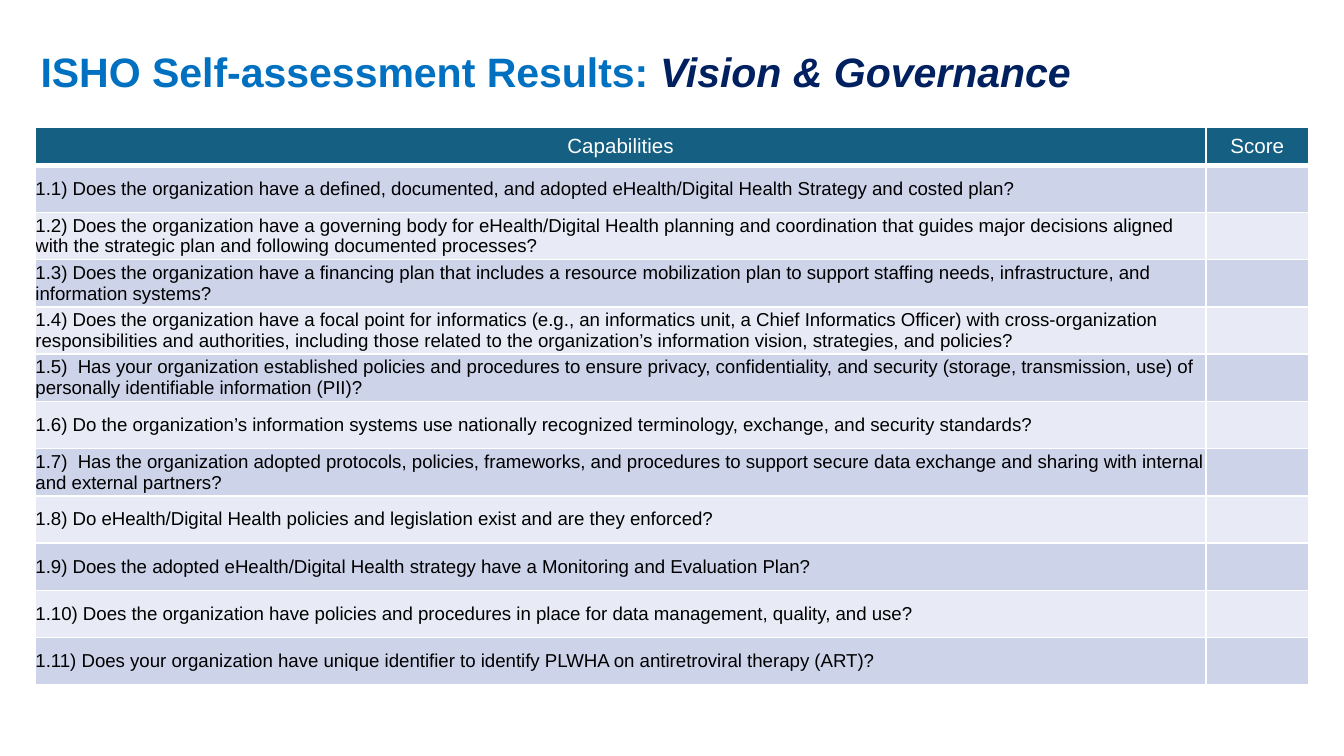
from lxml.etree import SubElement
from pptx import Presentation
from pptx.dml.color import RGBColor
from pptx.enum.text import MSO_ANCHOR, PP_ALIGN
from pptx.oxml.ns import qn
from pptx.util import Pt

QUESTIONS = [
    "1.1) Does the organization have a defined, documented, and adopted eHealth/Digital Health Strategy and costed plan?",
    "1.2) Does the organization have a governing body for eHealth/Digital Health planning and coordination that guides major decisions aligned with the strategic plan and following documented processes?",
    "1.3) Does the organization have a financing plan that includes a resource mobilization plan to support staffing needs, infrastructure, and information systems?",
    "1.4) Does the organization have a focal point for informatics (e.g., an informatics unit, a Chief Informatics Officer) with cross-organization responsibilities and authorities, including those related to the organization’s information vision, strategies, and policies?",
    "1.5)  Has your organization established policies and procedures to ensure privacy, confidentiality, and security (storage, transmission, use) of personally identifiable information (PII)?",
    "1.6) Do the organization’s information systems use nationally recognized terminology, exchange, and security standards?",
    "1.7)  Has the organization adopted protocols, policies, frameworks, and procedures to support secure data exchange and sharing with internal and external partners?",
    "1.8) Do eHealth/Digital Health policies and legislation exist and are they enforced?",
    "1.9) Does the adopted eHealth/Digital Health strategy have a Monitoring and Evaluation Plan?",
    "1.10) Does the organization have policies and procedures in place for data management, quality, and use?",
    "1.11) Does your organization have unique identifier to identify PLWHA on antiretroviral therapy (ART)?",
]


def color(value):
    return RGBColor.from_string(value)


class SlideBuilder:
    font = "Arial"
    white = "FFFFFF"
    header_fill = "156082"
    bands = ("CDD4EA", "E8EBF5")

    def __init__(self, page):
        self.page = page

    def title(self, left, top, width, height, parts):
        box = self.page.shapes.add_textbox(Pt(left), Pt(top), Pt(width), Pt(height))
        frame = box.text_frame
        frame.word_wrap = True
        frame.vertical_anchor = MSO_ANCHOR.MIDDLE
        frame.margin_left = frame.margin_right = Pt(5)
        frame.margin_top = frame.margin_bottom = Pt(3)
        para = frame.paragraphs[0]
        para.alignment = PP_ALIGN.CENTER
        para.font.name, para.font.size, para.font.bold = self.font, Pt(22), True
        for text, shade, italic in parts:
            span = para.add_run()
            span.text = text
            span.font.color.rgb = color(shade)
            span.font.italic = italic

    def borders(self, cell, **widths):
        properties = cell._tc.get_or_add_tcPr()
        for index, side in enumerate("LRTB"):
            line = properties.makeelement(qn(f"a:ln{side}"), {"w": str(Pt(widths.get(side, 1)))})
            fill = SubElement(line, qn("a:solidFill"))
            SubElement(fill, qn("a:srgbClr"), val=self.white)
            properties.insert(index, line)

    def cell(self, cell, text, header, fill):
        cell.fill.solid()
        cell.fill.fore_color.rgb = color(fill)
        cell.vertical_anchor = MSO_ANCHOR.MIDDLE
        cell.margin_left = cell.margin_right = Pt(6 if header else 0)
        cell.margin_top = cell.margin_bottom = Pt(3 if header else 0)
        cell.text = text
        para = cell.text_frame.paragraphs[0]
        para.alignment = PP_ALIGN.CENTER if header else PP_ALIGN.LEFT
        para.font.name, para.font.bold = self.font, False
        para.font.size = Pt(11 if header else 10)
        para.font.color.rgb = color(self.white if header else "000000")

    def table(self, left, top, widths, header_height, row_height, rows):
        height = header_height + row_height * (len(rows) - 1)
        table = self.page.shapes.add_table(
            len(rows), len(widths), Pt(left), Pt(top), Pt(sum(widths)), Pt(height)
        ).table
        for column, width in zip(table.columns, widths):
            column.width = Pt(width)
        for index, texts in enumerate(rows):
            header = index == 0
            table.rows[index].height = Pt(header_height if header else row_height)
            fill = self.header_fill if header else self.bands[(index - 1) % 2]
            for cell, text in zip(table.rows[index].cells, texts):
                self.cell(cell, text, header, fill)
                self.borders(cell, T=3 if index == 1 else 1, B=3 if header else 1)


def main():
    deck = Presentation()
    deck.slide_width, deck.slide_height = Pt(720), Pt(405)
    builder = SlideBuilder(deck.slides.add_slide(deck.slide_layouts[6]))
    builder.title(0, 12.5, 595.5, 51, [
        ("ISHO Self-assessment Results: ", "0070C0", False),
        ("Vision & Governance", "002060", True),
    ])
    rows = [("Capabilities", "Score")] + [(question, "") for question in QUESTIONS]
    builder.table(19, 68, (627, 55.2), 20.5, 25.34, rows)
    deck.save("out.pptx")


if __name__ == "__main__":
    main()
